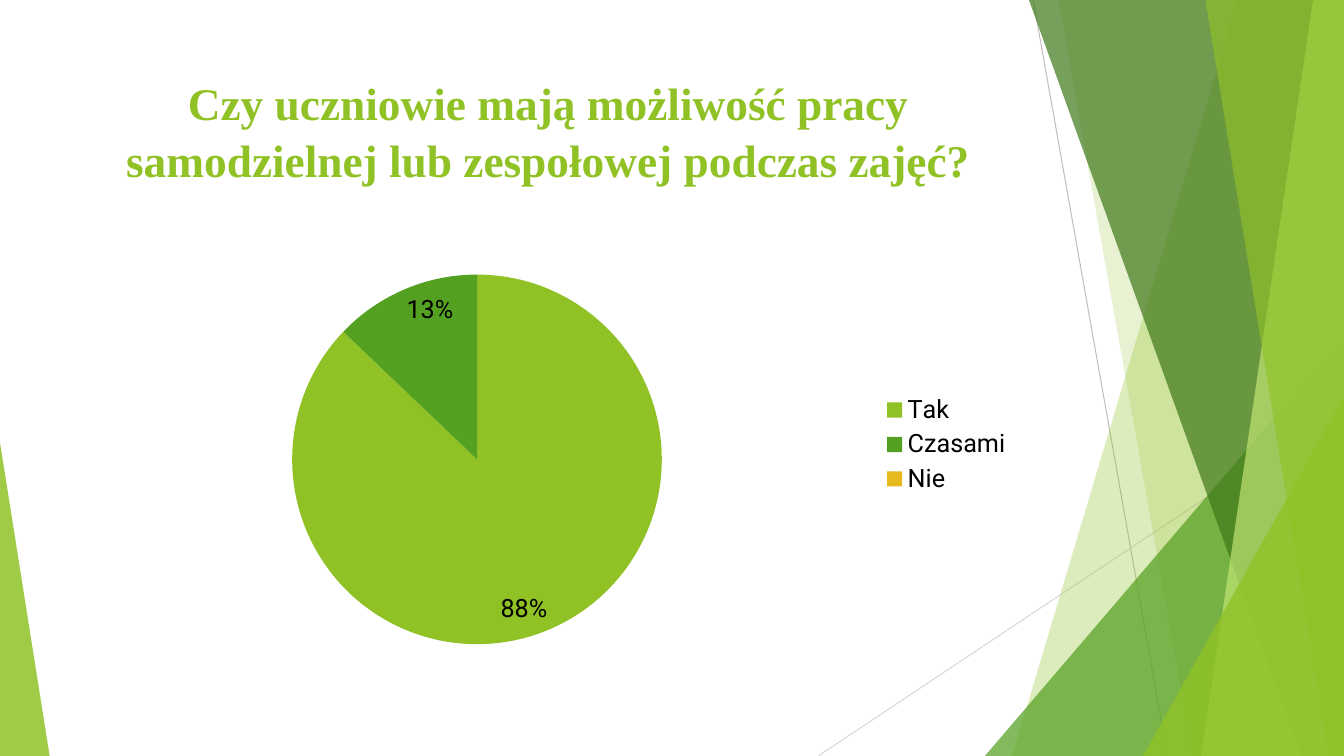
import pptx
import pptx.chart.data
import pptx.dml.color
import pptx.enum.chart
import pptx.enum.shapes
import pptx.enum.text
import pptx.oxml
import pptx.oxml.ns
import pptx.util
from lxml import etree

Pt = pptx.util.Pt
qn = pptx.oxml.ns.qn
W, H = 960, 540
COLORS = {
    "lime": "90C226", "green": "54A021", "forest": "3F7819", "pale": "C0E474",
    "gold": "E6B91E", "rule": "BFBFBF", "rule_light": "D9D9D9", "text": "000000",
}


def rgb(name):
    return pptx.dml.color.RGBColor.from_string(COLORS[name])


def add_rule(slide, start, end, color):
    line = slide.shapes.add_connector(
        pptx.enum.shapes.MSO_CONNECTOR.STRAIGHT, *(Pt(v) for v in start + end))
    line.line.color.rgb = rgb(color)
    line.line.width = Pt(0.75)
    etree.SubElement(line._element.spPr, qn("a:effectLst"))


def paint(sp, color, opacity):
    sp.shadow.inherit = False
    sp.fill.solid()
    sp.fill.fore_color.rgb = rgb(color)
    sp.line.fill.background()
    clr = sp._element.spPr.find(qn("a:solidFill"))[0]
    etree.SubElement(clr, qn("a:alpha")).set("val", str(opacity * 1000))


def add_band(slide, top_x, bottom_x, color, opacity):
    fb = slide.shapes.build_freeform(Pt(top_x), Pt(0))
    fb.add_line_segments([(Pt(W), Pt(0)), (Pt(W), Pt(H)), (Pt(bottom_x), Pt(H))])
    paint(fb.convert_to_shape(), color, opacity)


def add_corner(slide, x, y, w, apex, color, opacity):
    sp = slide.shapes.add_shape(
        pptx.enum.shapes.MSO_SHAPE.ISOSCELES_TRIANGLE, Pt(x), Pt(y), Pt(w), Pt(H - y))
    sp.adjustments[0] = apex
    paint(sp, color, opacity)


def add_backdrop(slide):
    add_rule(slide, (738, 0), (834, H), "rule")
    add_rule(slide, (W, 290), (584.5, H), "rule_light")
    add_band(slide, 884, 723, "lime", 30)
    add_band(slide, 756, 852, "lime", 20)
    add_corner(slide, 703.5, 240, W - 703.5, 1, "green", 72)
    add_band(slide, 735, 929.5, "forest", 70)
    add_band(slide, 938, 858, "pale", 70)
    add_band(slide, 861, 949, "lime", 65)
    add_corner(slide, 816.5, 283, W - 816.5, 1, "lime", 80)
    add_corner(slide, 0, 316, 35.5, 0, "lime", 85)


def add_title(slide, x, y, w, h, text):
    tf = slide.shapes.add_textbox(Pt(x), Pt(y), Pt(w), Pt(h)).text_frame
    tf.word_wrap = True
    tf.vertical_anchor = pptx.enum.text.MSO_ANCHOR.TOP
    p = tf.paragraphs[0]
    p.alignment = pptx.enum.text.PP_ALIGN.CENTER
    p.line_spacing = 1.05
    r = p.add_run()
    r.text = text
    r.font.name = "Times New Roman"
    r.font.size = Pt(32.4)
    r.font.bold = True
    r.font.color.rgb = rgb("lime")


def place_plot(chart, x, y, w, h):
    plot_area = chart._chartSpace.chart.plotArea
    for old in plot_area.findall(qn("c:layout")):
        plot_area.remove(old)
    layout = etree.Element(qn("c:layout"))
    manual = etree.SubElement(layout, qn("c:manualLayout"))
    settings = [("layoutTarget", "inner"), ("xMode", "edge"), ("yMode", "edge"),
                ("x", x), ("y", y), ("w", w), ("h", h)]
    for tag, value in settings:
        etree.SubElement(manual, qn("c:" + tag)).set("val", str(value))
    plot_area.insert(0, layout)


def add_answers_pie(slide, x, y, w, h, answers):
    data = pptx.chart.data.CategoryChartData()
    data.categories = [name for name, _, _ in answers]
    data.add_series("Series 1", [value for _, value, _ in answers])
    chart = slide.shapes.add_chart(
        pptx.enum.chart.XL_CHART_TYPE.PIE, Pt(x), Pt(y), Pt(w), Pt(h), data).chart
    chart.has_title = False
    chart.font.name = "Roboto"
    chart.font.size = Pt(18)
    chart.font.color.rgb = rgb("text")
    chart.has_legend = True
    chart.legend.position = pptx.enum.chart.XL_LEGEND_POSITION.RIGHT
    chart.legend.include_in_layout = False
    place_plot(chart, 0.23, 0.1, 0.39, 0.87)

    plot = chart.plots[0]
    plot.vary_by_categories = True
    series = plot.series[0]
    for i, (_, value, color) in enumerate(answers):
        fill = series.points[i].format.fill
        fill.solid()
        fill.fore_color.rgb = rgb(color)
    labels = series.data_labels
    labels.show_value = True
    labels.number_format = '0"%";;'
    labels.number_format_is_linked = False
    labels.position = pptx.enum.chart.XL_LABEL_POSITION.INSIDE_END


def main():
    prs = pptx.Presentation()
    prs.slide_width, prs.slide_height = Pt(W), Pt(H)
    slide = prs.slides.add_slide(prs.slide_layouts[6])
    add_backdrop(slide)
    add_title(slide, 53, 48, 677, 104,
              "Czy uczniowie mają możliwość pracy samodzielnej lub zespołowej podczas zajęć?")
    add_answers_pie(slide, 53, 165, 677, 305, [
        ("Tak", 88, "lime"), ("Czasami", 13, "green"), ("Nie", 0, "gold")])
    prs.save("out.pptx")


if __name__ == "__main__":
    main()
